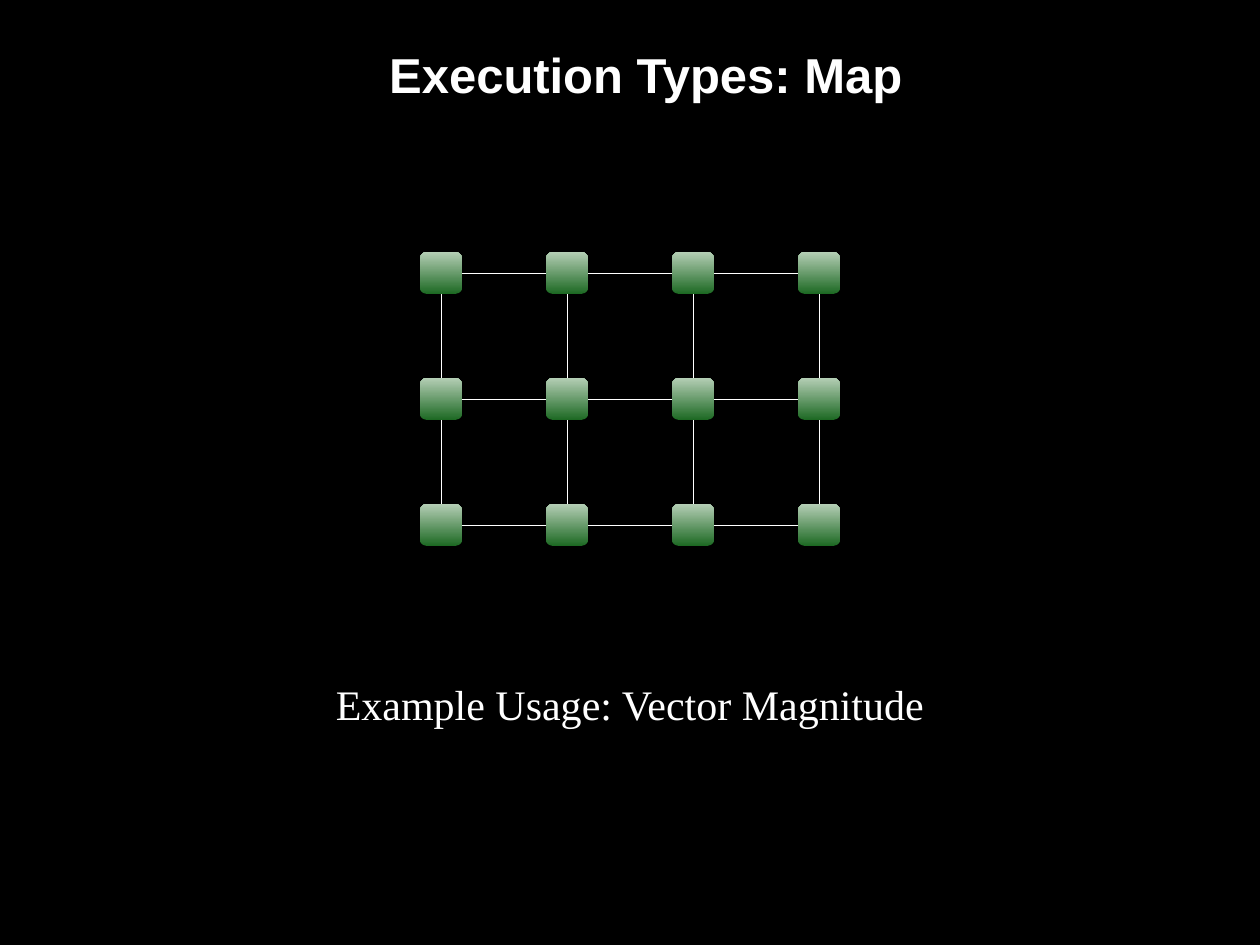
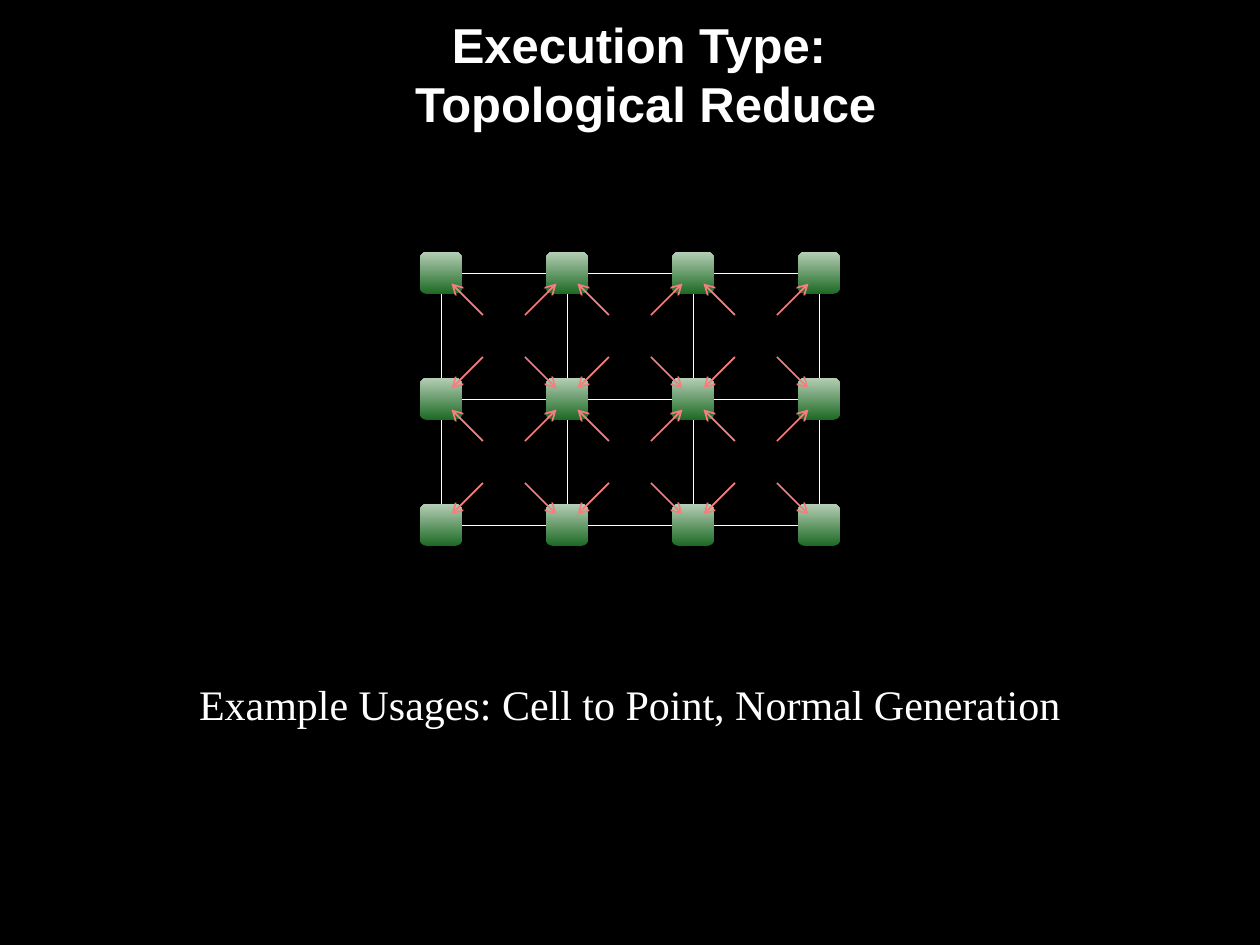
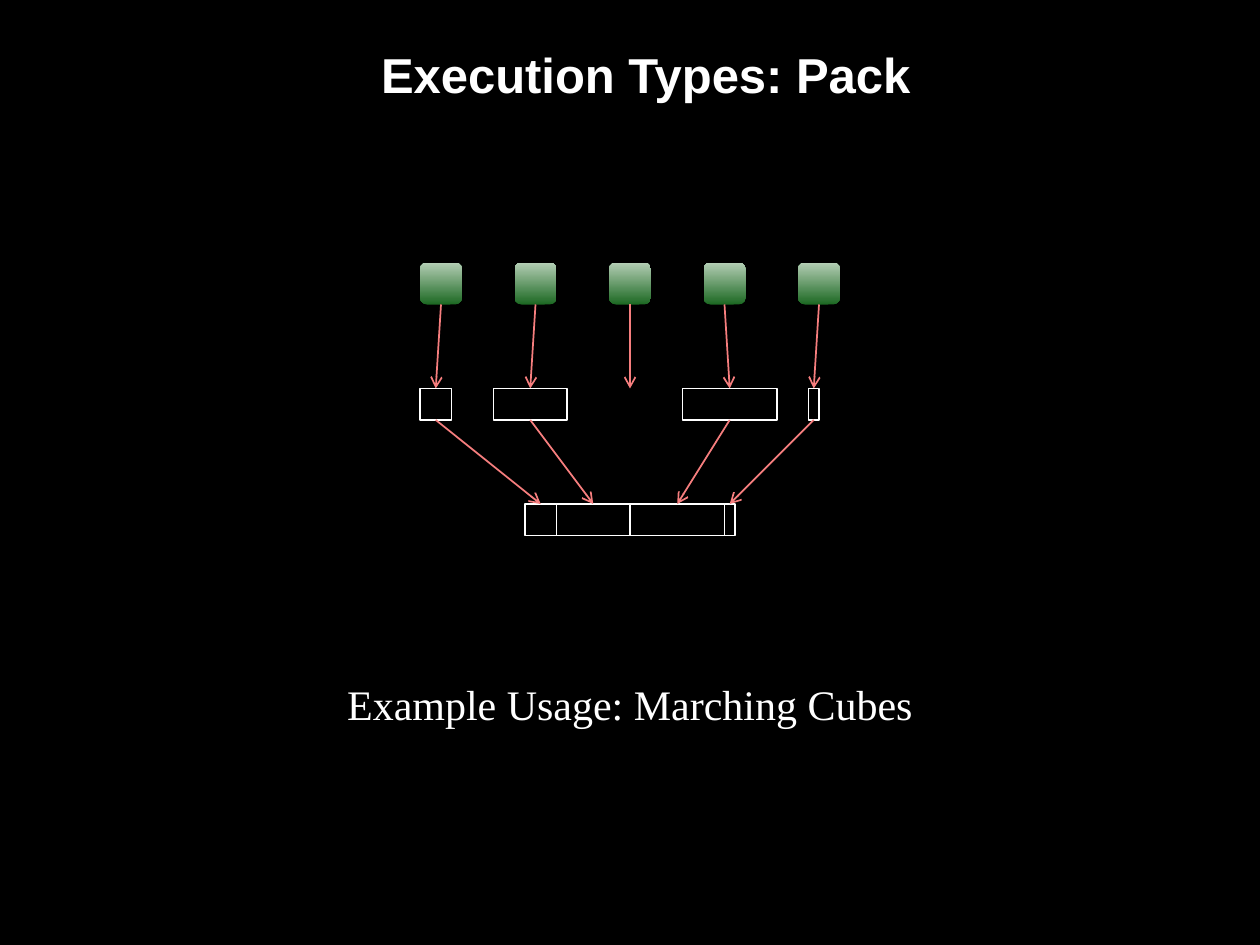
"""Build three slides on execution types: map, topological reduce and pack."""
from itertools import product

from lxml.etree import SubElement
from pptx import Presentation
from pptx.dml.color import RGBColor
from pptx.enum.shapes import MSO_CONNECTOR as CONNECTOR, MSO_SHAPE as SHAPE
from pptx.enum.text import MSO_ANCHOR as ANCHOR, PP_ALIGN as ALIGN
from pptx.oxml.ns import qn
from pptx.util import Inches, Pt

COLORS = {name: RGBColor.from_string(value) for name, value in {
    "background": "000000", "white": "FFFFFF", "arrow": "F67E7E",
    "node_dark": "1D6923", "node_light": "B4CEB5"}.items()}
UNIT = Inches(1) / 12
CENTER = 60
NODE = 4
CELL = 12
MESH_LEFT, MESH_TOP = 42, 26
MESH_COLUMNS, MESH_ROWS = 3, 2
SLIDES = [
    ("Execution Types: Map", "Example Usage: Vector Magnitude", 59),
    ("Execution Type: \vTopological Reduce",
     "Example Usages: Cell to Point, Normal Generation", 87),
    ("Execution Types: Pack", "Example Usage: Marching Cubes", 57),
]


def add_box(slide, kind, left, top, width, height, line_width=None):
    """Add a white outline, or a green gradient node if no line width is given."""
    shape = slide.shapes.add_shape(kind, *(round(n * UNIT) for n in (left, top, width, height)))
    shape.shadow.inherit = False
    if line_width:
        shape.fill.background()
        shape.line.color.rgb = COLORS["white"]
        shape.line.width = Pt(line_width)
    else:
        shape.line.fill.background()
        shape.fill.gradient()
        shape.fill.gradient_angle = 90
        for stop, name in zip(shape.fill.gradient_stops, ("node_dark", "node_light")):
            stop.color.rgb = COLORS[name]


def add_arrow(slide, *ends):
    """Add an arrow between two points given in grid units."""
    arrow = slide.shapes.add_connector(CONNECTOR.STRAIGHT, *(round(n * UNIT) for n in ends))
    arrow.line.color.rgb = COLORS["arrow"]
    arrow.line.width = Pt(1)
    SubElement(arrow.line._get_or_add_ln(), qn("a:tailEnd"), type="arrow")
    SubElement(arrow._element.spPr, qn("a:effectLst"))


presentation = Presentation()
presentation.slide_width, presentation.slide_height = Inches(10), Inches(7.5)

for title, caption, caption_width in SLIDES:
    slide = presentation.slides.add_slide(presentation.slide_layouts[6])
    slide.background.fill.solid()
    slide.background.fill.fore_color.rgb = COLORS["background"]
    for text, area, font_name, size, bold, wrap, anchor in (
        (title, (20, 0, 83, 14), "Arial", 28, True, True, ANCHOR.MIDDLE),
        (caption, (CENTER - caption_width / 2, 64, caption_width, 6),
         "Times New Roman", 24, False, False, ANCHOR.TOP),
    ):
        frame = slide.shapes.add_textbox(*(round(n * UNIT) for n in area)).text_frame
        frame.word_wrap = wrap
        frame.vertical_anchor = anchor
        paragraph = frame.paragraphs[0]
        paragraph.text = text
        paragraph.alignment = ALIGN.CENTER
        paragraph.font.name = font_name
        paragraph.font.size = Pt(size)
        paragraph.font.bold = bold
        paragraph.font.color.rgb = COLORS["white"]

map_slide, reduce_slide, pack_slide = presentation.slides

for slide in (map_slide, reduce_slide):
    for column, row in product(range(MESH_COLUMNS), range(MESH_ROWS)):
        add_box(slide, SHAPE.RECTANGLE, MESH_LEFT + column * CELL, MESH_TOP + row * CELL,
                CELL, CELL, 0.25)
    for column, row in product(range(MESH_COLUMNS + 1), range(MESH_ROWS + 1)):
        add_box(slide, SHAPE.ROUNDED_RECTANGLE, MESH_LEFT + column * CELL - NODE / 2,
                MESH_TOP + row * CELL - NODE / 2, NODE, NODE)

for column, row in product(range(MESH_COLUMNS), range(MESH_ROWS)):
    x = MESH_LEFT + (column + 0.5) * CELL
    y = MESH_TOP + (row + 0.5) * CELL
    for across, down in product((-1, 1), repeat=2):
        add_arrow(reduce_slide, x + 2 * across, y + 2 * down, x + 5 * across, y + 5 * down)

NODE_TOP, OUTPUT_TOP, PACKED_TOP = 25, 37, 48
NODE_PITCH, OUTPUT_HEIGHT = 9, 3
OUTPUTS = [(41.5, 3), (50.5, 7), (60, 0), (69.5, 9), (77.5, 1)]
packed_left = 50
for index, (output_x, width) in enumerate(OUTPUTS):
    node_x = MESH_LEFT + index * NODE_PITCH
    add_box(pack_slide, SHAPE.ROUNDED_RECTANGLE, node_x - NODE / 2, NODE_TOP, NODE, NODE)
    add_arrow(pack_slide, node_x, NODE_TOP + NODE, output_x, OUTPUT_TOP)
    if width:
        for left, top in ((output_x - width / 2, OUTPUT_TOP), (packed_left, PACKED_TOP)):
            add_box(pack_slide, SHAPE.RECTANGLE, left, top, width, OUTPUT_HEIGHT, 1)
        add_arrow(pack_slide, output_x, OUTPUT_TOP + OUTPUT_HEIGHT,
                  packed_left + width / 2, PACKED_TOP)
        packed_left += width

presentation.save("out.pptx")
